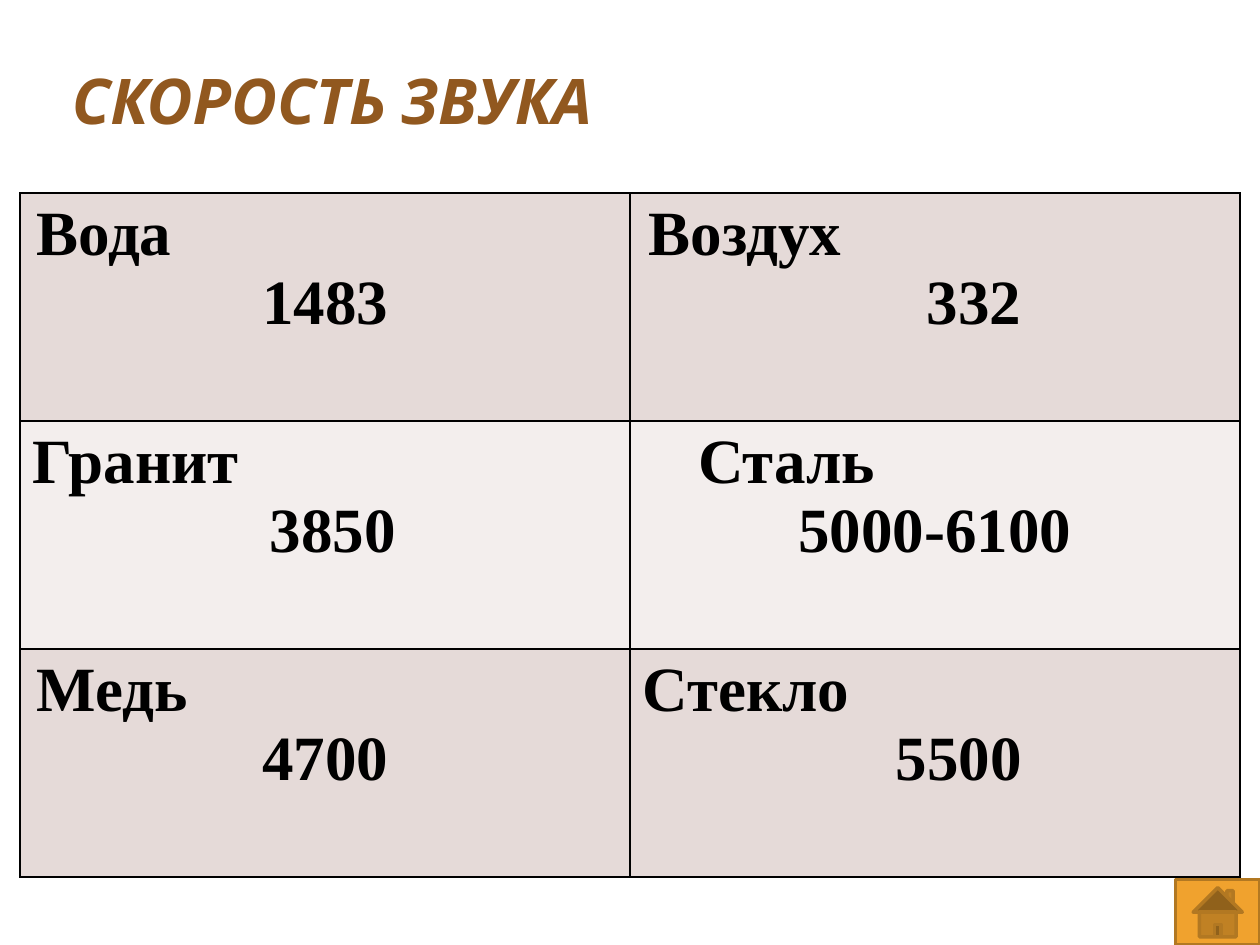
from pptx import Presentation
from pptx.dml.color import RGBColor
from pptx.enum.shapes import MSO_SHAPE as Shape
from pptx.enum.text import MSO_ANCHOR as Anchor, PP_ALIGN as Align
from pptx.oxml import parse_xml
from pptx.oxml.ns import nsdecls
from pptx.util import Inches, Pt

COLORS = {"title": "91581F", "text": "000000", "border": "000000",
          "odd_row": "E5DAD8", "even_row": "F3EEED",
          "button": "F0A22E", "button_line": "B27822"}
TITLE_FONT = {"name": "Cabin", "size": Pt(36), "bold": True, "italic": True}
CELL_FONT = {"name": "Times New Roman", "size": Pt(36), "bold": True}
COLUMN_WIDTH, ROW_HEIGHT = 4.84, 1.81

# Material, speed, and the left indent of each in inches
SPEEDS = [
    [("Вода", "1483", 0.03, 0), ("Воздух", "332", 0.05, 0.62)],
    [("Гранит", "3850", 0, 0.12), ("Сталь", "5000-6100", 0.44, 0)],
    [("Медь", "4700", 0.03, 0), ("Стекло", "5500", 0, 0.38)],
]


def rgb(role):
    return RGBColor.from_string(COLORS[role])


def place(shape, *box):
    for side, length in zip(("left", "top", "width", "height"), box):
        setattr(shape, side, Inches(length))


def write(paragraph, text, font, color, align, indent=0):
    paragraph.alignment = align
    if indent:
        paragraph._p.get_or_add_pPr().set("marL", str(Inches(indent)))
    run = paragraph.add_run()
    run.text = text
    for attribute, value in font.items():
        setattr(run.font, attribute, value)
    run.font.color.rgb = rgb(color)


def add_title(slide, text):
    title = slide.shapes.title
    place(title, 0.47, 0.16, 9, 1.25)
    title.text_frame.vertical_anchor = Anchor.MIDDLE
    write(title.text_frame.paragraphs[0], text, TITLE_FONT, "title", Align.LEFT)


def add_borders(cell):
    """Put the four lines before the fill, as the schema orders them."""
    properties = cell._tc.get_or_add_tcPr()
    for position, side in enumerate(("lnL", "lnR", "lnT", "lnB")):
        properties.insert(position, parse_xml(
            f'<a:{side} {nsdecls("a")} w="{Pt(1)}"><a:solidFill>'
            f'<a:srgbClr val="{COLORS["border"]}"/></a:solidFill></a:{side}>'))


def fill_cell(cell, entry, row_color):
    material, speed, material_indent, speed_indent = entry
    cell.fill.solid()
    cell.fill.fore_color.rgb = rgb(row_color)
    add_borders(cell)
    frame = cell.text_frame
    write(frame.paragraphs[0], material, CELL_FONT, "text", Align.LEFT, material_indent)
    write(frame.add_paragraph(), speed, CELL_FONT, "text", Align.CENTER, speed_indent)


def add_speed_table(slide):
    rows, columns = len(SPEEDS), len(SPEEDS[0])
    table = slide.shapes.add_table(
        rows, columns, Inches(0.16), Inches(1.53),
        Inches(columns * COLUMN_WIDTH), Inches(rows * ROW_HEIGHT)).table
    for row, entries in enumerate(SPEEDS):
        row_color = "even_row" if row % 2 else "odd_row"
        for column, entry in enumerate(entries):
            fill_cell(table.cell(row, column), entry, row_color)


def add_home_button(slide):
    button = slide.shapes.add_shape(
        Shape.ACTION_BUTTON_HOME, Inches(9.33), Inches(6.98), Inches(0.67), Inches(0.52))
    button.shadow.inherit = False
    button.fill.solid()
    button.fill.fore_color.rgb = rgb("button")
    button.line.color.rgb = rgb("button_line")
    button.line.width = Pt(2)


def main():
    deck = Presentation()
    deck.slide_width, deck.slide_height = Inches(10), Inches(7.5)
    slide = deck.slides.add_slide(deck.slide_layouts[5])
    add_title(slide, "СКОРОСТЬ ЗВУКА")
    add_speed_table(slide)
    add_home_button(slide)
    deck.save("out.pptx")


if __name__ == "__main__":
    main()
